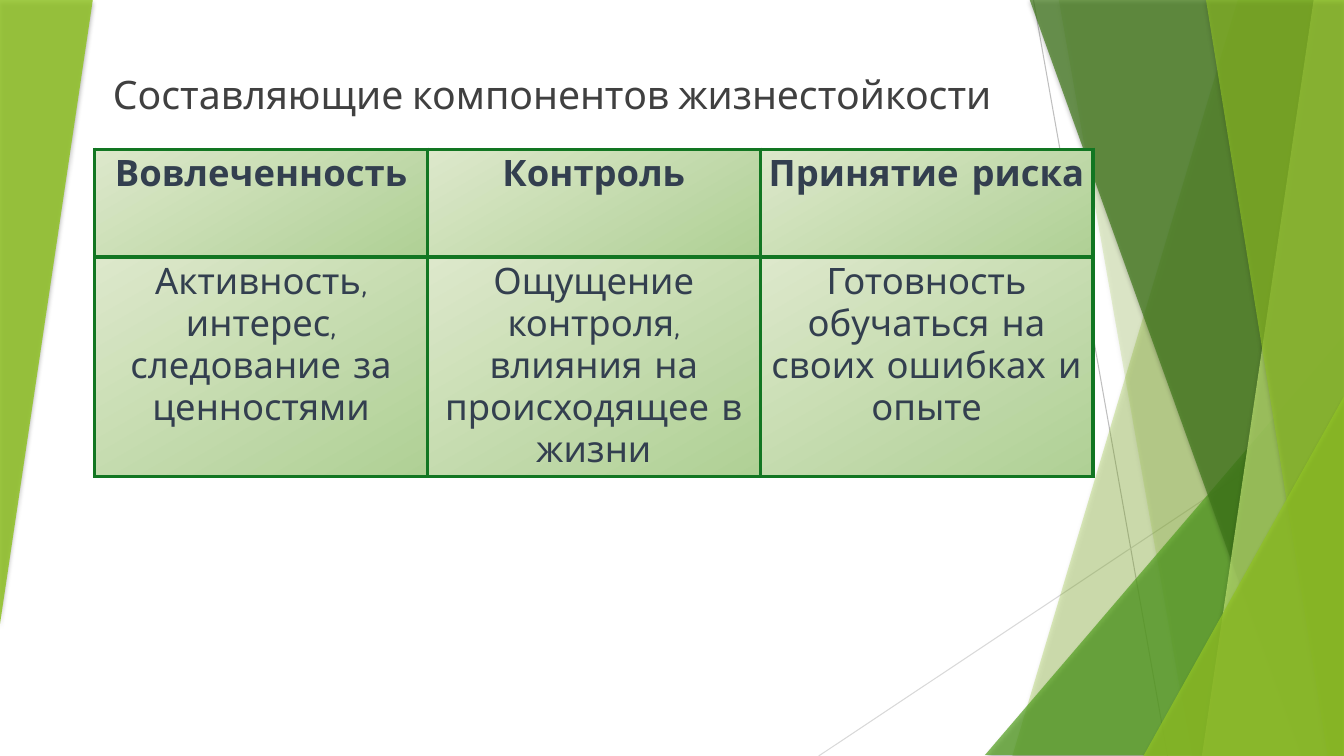
from lxml import etree
from pptx import Presentation
from pptx.dml.color import RGBColor
from pptx.enum.shapes import MSO_CONNECTOR, MSO_SHAPE
from pptx.enum.text import MSO_ANCHOR, MSO_AUTO_SIZE, PP_ALIGN
from pptx.oxml import parse_xml
from pptx.oxml.ns import nsdecls, qn
from pptx.util import Inches, Pt

HEADING = "Составляющие компонентов жизнестойкости"
COMPONENTS = [
    ("Вовлеченность", "Контроль", "Принятие риска"),
    (
        "Активность, интерес, следование за ценностями",
        "Ощущение контроля, влияния на происходящее в жизни",
        "Готовность обучаться на своих ошибках и опыте",
    ),
]

LIME = RGBColor(0x90, 0xC2, 0x26)
GREEN = RGBColor(0x54, 0xA0, 0x21)
FOREST = RGBColor(0x3F, 0x78, 0x19)
PALE_LIME = RGBColor(0xC0, 0xE4, 0x74)
GRAY = RGBColor(0xBF, 0xBF, 0xBF)
LIGHT_GRAY = RGBColor(0xD9, 0xD9, 0xD9)
HEADING_COLOR = RGBColor(0x40, 0x40, 0x40)
CELL_TEXT = RGBColor(0x33, 0x3F, 0x4F)
CELL_LIGHT = RGBColor(0xDD, 0xE8, 0xCB)
CELL_DARK = RGBColor(0xAF, 0xD0, 0x95)
BORDER = RGBColor(0x12, 0x76, 0x22)

WIDTH, HEIGHT = 13.33, 7.5
BAND_TOP = -0.01
LINES = [  # start x, start y, end x, end y, color
    (10.25, 0, 11.58, HEIGHT, GRAY),
    (WIDTH, 4.03, 8.12, HEIGHT, LIGHT_GRAY),
]
# Bands run to the right edge: ("band", left x at top, left x at bottom, color, opacity %)
# Triangles: ("triangle", left, top, width, height, rotation, color, opacity %)
DECORATION = [
    ("band", 12.28, 10.04, LIME, 30),
    ("band", 10.5, 11.82, LIME, 20),
    ("triangle", 9.77, 3.33, 3.56, 4.16, 0, GREEN, 72),
    ("band", 10.21, 12.91, FOREST, 70),
    ("band", 13.03, 11.92, PALE_LIME, 70),
    ("band", 11.96, 13.17, LIME, 65),
    ("triangle", 11.34, 3.93, 1.99, 3.57, 0, LIME, 80),
    ("triangle", 0, 0, 0.92, 6.19, 180, LIME, 85),
]
TABLE_LEFT, TABLE_TOP = 0.94, 1.48
COLUMN_WIDTH = 3.3
ROW_HEIGHTS = (1.07, 2.17)


def add_line(slide, x1, y1, x2, y2, color):
    line = slide.shapes.add_connector(
        MSO_CONNECTOR.STRAIGHT, Inches(x1), Inches(y1), Inches(x2), Inches(y2))
    line.line.color.rgb = color
    line.line.width = Pt(0.75)
    etree.SubElement(line._element.spPr, qn("a:effectLst"))


def add_band(slide, top_x, bottom_x):
    corners = [(Inches(x), Inches(y)) for x, y in (
        (top_x, BAND_TOP), (WIDTH, BAND_TOP), (WIDTH, HEIGHT), (bottom_x, HEIGHT))]
    builder = slide.shapes.build_freeform(*corners[0])
    builder.add_line_segments(corners[1:], close=True)
    return builder.convert_to_shape()


def add_triangle(slide, left, top, width, height, rotation):
    triangle = slide.shapes.add_shape(
        MSO_SHAPE.ISOSCELES_TRIANGLE, Inches(left), Inches(top), Inches(width), Inches(height))
    triangle.adjustments[0] = 1
    triangle.rotation = rotation
    return triangle


def style_glass(shape, color, opacity):
    """Give a shape a translucent fill, no outline and a soft drop shadow."""
    shape.fill.solid()
    shape.fill.fore_color.rgb = color
    shape.line.fill.background()
    properties = shape._element.spPr
    fill_color = properties.find(qn("a:solidFill")).find(qn("a:srgbClr"))
    etree.SubElement(fill_color, qn("a:alpha"), val=str(opacity * 1000))
    properties.append(parse_xml(
        f'<a:effectLst {nsdecls("a")}><a:outerShdw blurRad="{Pt(3)}" dist="{Pt(2)}" '
        'dir="5400000" rotWithShape="0"><a:srgbClr val="000000"><a:alpha val="35000"/>'
        '</a:srgbClr></a:outerShdw></a:effectLst>'))


def add_heading(slide):
    body = slide.placeholders[1]
    body.left, body.top = Inches(0.74), Inches(0.7)
    body.width, body.height = Inches(10.69), Inches(6.39)
    frame = body.text_frame
    frame.margin_left = frame.margin_right = frame.margin_top = frame.margin_bottom = 0
    frame.vertical_anchor = MSO_ANCHOR.TOP
    frame.auto_size = MSO_AUTO_SIZE.NONE
    frame.text = HEADING
    paragraph = frame.paragraphs[0]
    paragraph.space_before = Pt(10)
    paragraph.font.name = "Cabin"
    paragraph.font.size = Pt(28)
    paragraph.font.color.rgb = HEADING_COLOR
    properties = paragraph._p.get_or_add_pPr()
    properties.set("marL", str(Inches(0.38)))
    properties.set("indent", "0")
    properties.find(qn("a:spcBef")).addnext(parse_xml(f'<a:buNone {nsdecls("a")}/>'))


def style_cell(cell, bold):
    cell.margin_left = cell.margin_right = Inches(0.04)
    cell.margin_top = cell.margin_bottom = Inches(0.05)
    cell.fill.gradient()
    cell.fill.gradient_angle = 300
    for stop, color in zip(cell.fill.gradient_stops, (CELL_LIGHT, CELL_DARK)):
        stop.color.rgb = color
    for position, side in enumerate(("lnL", "lnR", "lnT", "lnB")):
        cell._tc.get_or_add_tcPr().insert(position, parse_xml(
            f'<a:{side} {nsdecls("a")} w="{Pt(2.55)}"><a:solidFill>'
            f'<a:srgbClr val="{BORDER}"/></a:solidFill></a:{side}>'))
    paragraph = cell.text_frame.paragraphs[0]
    paragraph.alignment = PP_ALIGN.CENTER
    paragraph.font.name = "Comic Neue"
    paragraph.font.size = Pt(26)
    paragraph.font.bold = bold
    paragraph.font.color.rgb = CELL_TEXT


def add_components_table(slide):
    column_count = len(COMPONENTS[0])
    table = slide.shapes.add_table(
        len(COMPONENTS), column_count, Inches(TABLE_LEFT), Inches(TABLE_TOP),
        Inches(COLUMN_WIDTH * column_count), Inches(sum(ROW_HEIGHTS))).table
    table.horz_banding = False
    for column in table.columns:
        column.width = Inches(COLUMN_WIDTH)
    for row_index, texts in enumerate(COMPONENTS):
        table.rows[row_index].height = Inches(ROW_HEIGHTS[row_index])
        for column_index, text in enumerate(texts):
            cell = table.cell(row_index, column_index)
            cell.text = text
            style_cell(cell, bold=row_index == 0)


def main():
    presentation = Presentation()
    presentation.slide_width, presentation.slide_height = Inches(WIDTH), Inches(HEIGHT)
    slide = presentation.slides.add_slide(presentation.slide_layouts[1])
    title = slide.shapes.title._element
    title.getparent().remove(title)

    for line in LINES:
        add_line(slide, *line)
    builders = {"band": add_band, "triangle": add_triangle}
    for kind, *geometry, color, opacity in DECORATION:
        style_glass(builders[kind](slide, *geometry), color, opacity)
    add_heading(slide)
    add_components_table(slide)
    presentation.save("out.pptx")


if __name__ == "__main__":
    main()
